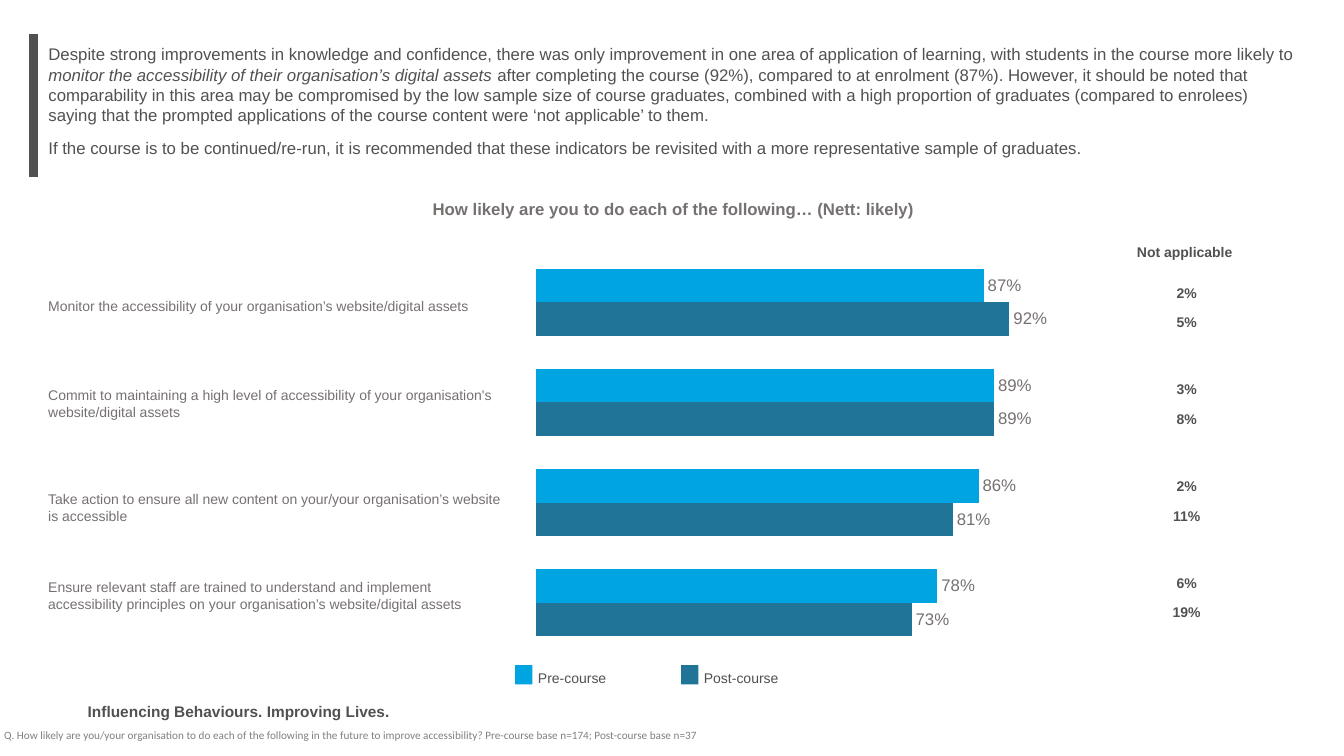
from lxml.etree import SubElement
from pptx import Presentation
from pptx.chart.data import CategoryChartData
from pptx.dml.color import RGBColor
from pptx.enum.chart import XL_CHART_TYPE, XL_LABEL_POSITION
from pptx.enum.shapes import MSO_CONNECTOR, MSO_SHAPE
from pptx.enum.text import MSO_ANCHOR, MSO_AUTO_SIZE, PP_ALIGN
from pptx.oxml import parse_xml
from pptx.oxml.ns import nsdecls, qn
from pptx.util import Inches, Pt

# The slide is a grid of 100 columns by 100 rows.
WIDTH, HEIGHT = Inches(13.33), Inches(7.5)
DARK, GREY, PALE_GREY = "515154", "767171", "808080"
LEFT_EDGE, LABEL_WIDTH, LABEL_HEIGHT = 2.85, 35.7, 6
SHARE_LEFT, SHARE_TOP, SHARE_STEP = 78.92, 36.93, 12.8
LEGEND_LEFT, LEGEND_STEP = 38.33, 12.35

INTRO = [
    [("Despite strong improvements in knowledge and confidence, there was only improvement in one area "
      "of application of learning, with students in the course more likely to ", False),
     ("monitor the accessibility of their organisation’s digital assets", True),
     (" after completing the course (92%), compared to at enrolment (87%). However, it should be noted "
      "that comparability in this area may be compromised by the low sample size of course graduates, "
      "combined with a high proportion of graduates (compared to enrolees) saying that the prompted "
      "applications of the course content were ‘not applicable’ to them.", False)],
    "If the course is to be continued/re-run, it is recommended that these indicators be revisited "
    "with a more representative sample of graduates.",
]
# Label, middle row of the label, not-applicable shares before and after the course
ACTIONS = [
    ("Monitor the accessibility of your organisation’s website/digital assets", 40.4, ["2%", "5%"]),
    ("Commit to maintaining a high level of accessibility of your organisation's website/digital assets",
     53.4, ["3%", "8%"]),
    ("Take action to ensure all new content on your/your organisation’s website is accessible",
     67.07, ["2%", "11%"]),
    ("Ensure relevant staff are trained to understand and implement accessibility principles on your "
     "organisation’s website/digital assets", 78.8, ["6%", "19%"]),
]
SERIES = [
    ("Pre-course", "00A4E0", (0.87, 0.89, 0.86, 0.78)),
    ("Post-course", "1F7498", (0.92, 0.89, 0.81, 0.73)),
]


def color(value):
    return RGBColor.from_string(value)


def across(columns):
    return int(WIDTH * columns / 100)


def down(rows):
    return int(HEIGHT * rows / 100)


def place(left, top, width, height):
    return across(left), down(top), across(width), down(height)


def set_font(font, size, shade, name="Arial", bold=False, italic=False):
    font.name, font.size, font.bold, font.italic = name, Pt(size), bold, italic
    font.color.rgb = color(shade)


def write(frame, paragraphs, size=10, shade=DARK, name="Arial", bold=False, align=PP_ALIGN.LEFT,
          anchor=MSO_ANCHOR.TOP, inset=None, line_spacing=1.0, before=0, after=0):
    """Fill a text frame; a paragraph is a string or a list of (text, italic) spans."""
    frame.word_wrap = True
    frame.auto_size = MSO_AUTO_SIZE.NONE
    frame.vertical_anchor = anchor
    if inset is not None:
        frame.margin_left = frame.margin_right = Inches(inset)
        frame.margin_top = frame.margin_bottom = Inches(inset)
    for index, content in enumerate(paragraphs):
        para = frame.add_paragraph() if index else frame.paragraphs[0]
        para.alignment, para.line_spacing = align, line_spacing
        para.space_before, para.space_after = Pt(before if index else 0), Pt(after)
        spans = [(content, False)] if isinstance(content, str) else content
        for text, italic in spans:
            span = para.add_run()
            span.text = text
            set_font(span.font, size, shade, name, bold, italic)


def add_text(slide, area, paragraphs, **text_format):
    box = slide.shapes.add_textbox(*place(*area))
    write(box.text_frame, paragraphs, **text_format)


def fill_placeholder(holder, area, paragraphs, **text_format):
    holder.left, holder.top, holder.width, holder.height = place(*area)
    write(holder.text_frame, paragraphs, anchor=MSO_ANCHOR.MIDDLE, **text_format)


def remove_bullets(frame):
    for para in frame.paragraphs:
        properties = para._p.get_or_add_pPr()
        properties.set("marL", "0")
        properties.set("indent", "0")
        SubElement(properties, qn("a:buNone"))


def add_rule(slide, column, top, bottom):
    rule = slide.shapes.add_connector(MSO_CONNECTOR.STRAIGHT, across(column), down(top),
                                      across(column), down(bottom))
    rule.line.color.rgb = color(DARK)
    rule.line.width = Pt(6)
    SubElement(rule._element.spPr, qn("a:effectLst"))


def add_swatch(slide, area, shade):
    swatch = slide.shapes.add_shape(MSO_SHAPE.RECTANGLE, *place(*area))
    swatch.shadow.inherit = False
    swatch.fill.solid()
    swatch.fill.fore_color.rgb = color(shade)
    swatch.line.fill.background()


def fix_plot_area(chart):
    """Pin the bars to the labels on either side of the chart."""
    plot_area = chart._chartSpace.chart.plotArea
    for layout in plot_area.findall(qn("c:layout")):
        plot_area.remove(layout)
    shares = "".join(f'<c:{tag} val="{share}"/>'
                     for tag, share in (("x", 0.02), ("y", 0.02), ("w", 0.96), ("h", 0.96)))
    plot_area.insert(0, parse_xml(
        f'<c:layout {nsdecls("c")}><c:manualLayout><c:layoutTarget val="inner"/>'
        f'<c:xMode val="edge"/><c:yMode val="edge"/>{shares}</c:manualLayout></c:layout>'))


def add_likelihood_chart(slide, area):
    data = CategoryChartData(number_format="0%")
    data.categories = [str(number) for number in range(1, len(ACTIONS) + 1)]
    for name, _, values in SERIES:
        data.add_series(name, values)
    chart = slide.shapes.add_chart(XL_CHART_TYPE.BAR_CLUSTERED, *place(*area), data).chart
    chart.has_legend = chart.has_title = False
    set_font(chart.font, 10, DARK)
    chart.category_axis.reverse_order = True
    chart.value_axis.minimum_scale, chart.value_axis.maximum_scale = 0, 1
    chart.value_axis.major_unit = 1
    for axis in (chart.category_axis, chart.value_axis):
        axis.has_major_gridlines = axis.visible = False
    plot = chart.plots[0]
    plot.gap_width, plot.overlap, plot.vary_by_categories = 100, 0, False
    for series, (_, shade, _) in zip(plot.series, SERIES):
        series.format.fill.solid()
        series.format.fill.fore_color.rgb = color(shade)
        labels = series.data_labels
        labels.show_value = True
        labels.number_format, labels.number_format_is_linked = "0%", False
        labels.position = XL_LABEL_POSITION.OUTSIDE_END
        set_font(labels.font, 12, GREY)
    fix_plot_area(chart)


def main():
    deck = Presentation()
    deck.slide_width, deck.slide_height = WIDTH, HEIGHT
    slide = deck.slides.add_slide(deck.slide_layouts[1])
    title, intro = slide.placeholders

    fill_placeholder(title, (23.18, 24.53, 53.86, 6.13),
                     ["How likely are you to do each of the following… (Nett: likely)"],
                     size=12, shade=GREY, bold=True, align=PP_ALIGN.CENTER)
    fill_placeholder(intro, (LEFT_EDGE, 3.2, 94.65, 20.27), INTRO, size=12, after=9)
    remove_bullets(intro.text_frame)
    add_rule(slide, 2.48, 4.53, 23.47)

    add_likelihood_chart(slide, (39.08, 32.27, 39.9, 55.2))
    add_text(slide, (SHARE_LEFT - 0.15, 31.07, 18.75, 3.73), ["Not applicable"], bold=True,
             align=PP_ALIGN.CENTER, line_spacing=1.2)
    for row, (label, middle, shares) in enumerate(ACTIONS):
        add_text(slide, (LEFT_EDGE, middle - LABEL_HEIGHT / 2, LABEL_WIDTH, LABEL_HEIGHT), [label],
                 shade=GREY, anchor=MSO_ANCHOR.MIDDLE)
        add_text(slide, (SHARE_LEFT, SHARE_TOP + row * SHARE_STEP, 18.75, 7.47), shares, bold=True,
                 align=PP_ALIGN.CENTER, before=9)

    for index, (name, shade, _) in enumerate(SERIES):
        left = LEGEND_LEFT + index * LEGEND_STEP
        add_swatch(slide, (left, 88, 1.28, 2.53), shade)
        add_text(slide, (left + 1.4, 87.6, 11, 4), [name], inset=0.04, line_spacing=1.2)

    add_text(slide, (6.23, 91.87, 29.63, 4), ["Influencing Behaviours. Improving Lives."], size=11,
             bold=True, anchor=MSO_ANCHOR.MIDDLE, inset=0.04, line_spacing=1.2)
    add_text(slide, (0, 95.87, 89.57, 4.1),
             ["Q. How likely are you/your organisation to do each of the following in the future to improve "
              "accessibility? Pre-course base n=174; Post-course base n=37"],
             size=8, shade=PALE_GREY, name="Calibri", inset=0.04, line_spacing=Pt(9))
    deck.save("out.pptx")


if __name__ == "__main__":
    main()
